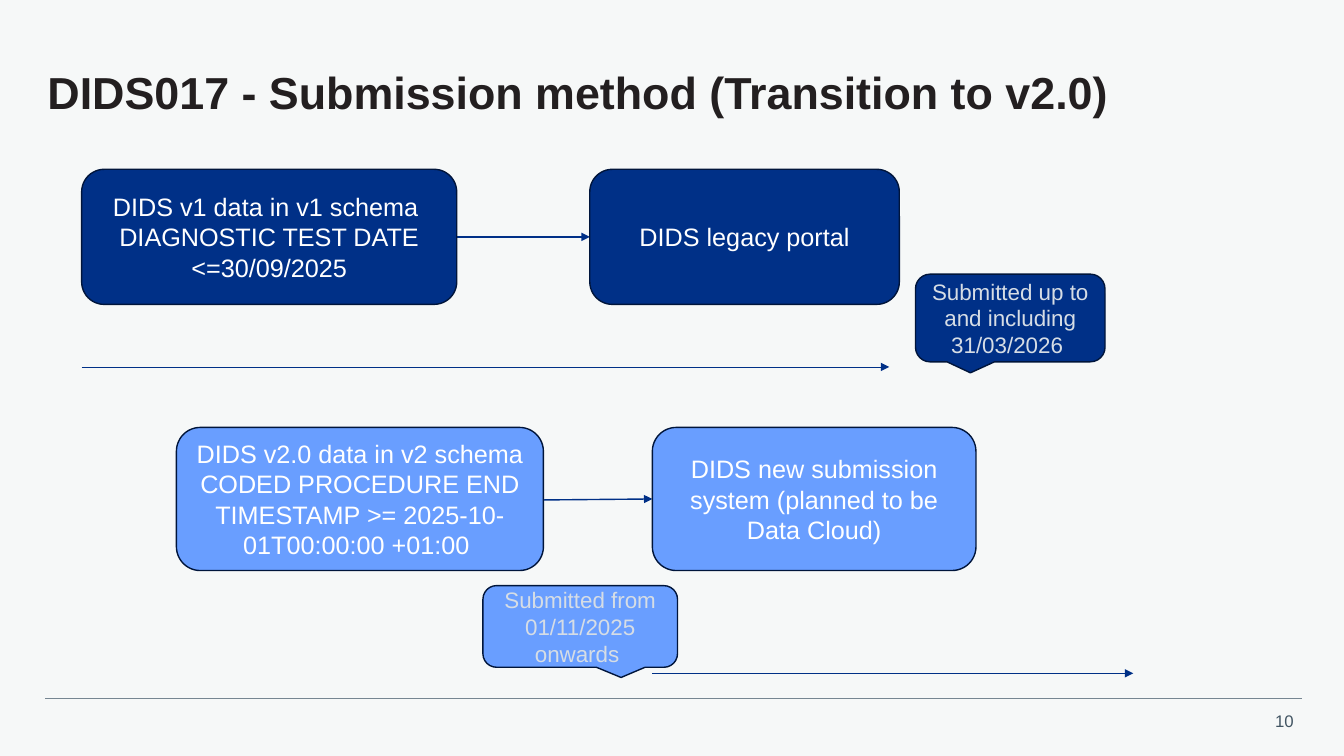
from lxml.etree import SubElement
from pptx import Presentation
from pptx.dml.color import RGBColor
from pptx.enum.shapes import MSO_CONNECTOR, MSO_SHAPE
from pptx.enum.text import MSO_ANCHOR, MSO_AUTO_SIZE, PP_ALIGN
from pptx.oxml.ns import qn
from pptx.util import Inches, Pt

NAVY = RGBColor(0x00, 0x30, 0x87)
SKY = RGBColor(0x69, 0x9E, 0xFF)
EDGE = RGBColor(0x00, 0x15, 0x3B)
WHITE = RGBColor(0xFF, 0xFF, 0xFF)
PALE = RGBColor(0xD6, 0xDD, 0xE5)
INK = RGBColor(0x23, 0x1F, 0x20)
SLATE = RGBColor(0x42, 0x55, 0x63)
RULE = RGBColor(0x76, 0x86, 0x92)
PAPER = RGBColor(0xF6, 0xF8, 0xF8)


def write(frame, text, size, color, align, bold=False):
    """Fill a text frame, one paragraph per line of text."""
    frame.word_wrap = True
    frame.auto_size = MSO_AUTO_SIZE.NONE
    frame.text = text
    for para in frame.paragraphs:
        para.alignment = align
        for run in para.runs:
            font = run.font
            font.name, font.size, font.bold = "Arial", Pt(size), bold
            font.color.rgb = color


def link(x1, y1, x2, y2, color, width, arrow=True):
    """Draw a straight line, with an arrowhead at its end if wanted."""
    line = slide.shapes.add_connector(
        MSO_CONNECTOR.STRAIGHT, Inches(x1), Inches(y1), Inches(x2), Inches(y2))
    line.line.color.rgb = color
    line.line.width = Pt(width)
    if arrow:
        SubElement(line.line._get_or_add_ln(), qn("a:tailEnd"), type="triangle")
    SubElement(line._element.spPr, qn("a:effectLst"))


prs = Presentation()
prs.slide_width, prs.slide_height = Inches(13.33), Inches(7.5)
slide = prs.slides.add_slide(prs.slide_layouts[5])
slide.background.fill.solid()
slide.background.fill.fore_color.rgb = PAPER

# Title
title = slide.shapes.title
title.left, title.top = Inches(0.47), Inches(0.47)
title.width, title.height = Inches(12.47), Inches(0.95)
frame = title.text_frame
write(frame, "DIDS017 - Submission method (Transition to v2.0)",
      32, INK, PP_ALIGN.LEFT, bold=True)
frame.vertical_anchor = MSO_ANCHOR.MIDDLE
frame.margin_left = frame.margin_right = 0
frame.margin_top = frame.margin_bottom = 0
frame.paragraphs[0].line_spacing = 0.9
frame.paragraphs[0].space_after = Pt(6)

# Footer
link(0.45, 6.93, 12.91, 6.93, RULE, 0.5, arrow=False)
number = slide.shapes.add_textbox(
    Inches(12.43), Inches(7), Inches(0.5), Inches(0.3))
write(number.text_frame, "10", 12, SLATE, PP_ALIGN.RIGHT)

# Time lines, then the arrows between boxes
link(0.81, 3.64, 8.82, 3.64, NAVY, 0.5)
link(6.47, 6.68, 11.24, 6.68, NAVY, 0.5)
link(4.53, 2.35, 5.85, 2.35, NAVY, 1)
link(5.39, 4.96, 6.47, 4.95, NAVY, 1)

# Boxes and callouts
BOX, NOTE = MSO_SHAPE.ROUNDED_RECTANGLE, MSO_SHAPE.ROUNDED_RECTANGULAR_CALLOUT
STYLES = {BOX: (18, WHITE), NOTE: (16, PALE)}
items = [
    (BOX, 0.81, 1.68, 3.72, 1.34, NAVY,
     "DIDS v1 data in v1 schema \nDIAGNOSTIC TEST DATE <=30/09/2025"),
    (BOX, 5.85, 1.68, 3.07, 1.34, NAVY, "DIDS legacy portal"),
    (BOX, 1.75, 4.24, 3.64, 1.42, SKY,
     "DIDS v2.0 data in v2 schema\n"
     "CODED PROCEDURE END TIMESTAMP >= 2025-10-01T00:00:00 +01:00 "),
    (BOX, 6.47, 4.24, 3.21, 1.42, SKY,
     "DIDS new submission system (planned to be Data Cloud)"),
    (NOTE, 9.08, 2.72, 1.88, 0.87, NAVY,
     "Submitted up to and including 31/03/2026 "),
    (NOTE, 4.79, 5.81, 1.93, 0.81, SKY,
     "Submitted from\n01/11/2025 onwards "),
]
for kind, x, y, w, h, fill, text in items:
    shape = slide.shapes.add_shape(
        kind, Inches(x), Inches(y), Inches(w), Inches(h))
    shape.shadow.inherit = False
    shape.fill.solid()
    shape.fill.fore_color.rgb = fill
    shape.line.color.rgb = EDGE
    shape.line.width = Pt(1)
    size, color = STYLES[kind]
    write(shape.text_frame, text, size, color, PP_ALIGN.CENTER)
    shape.text_frame.vertical_anchor = MSO_ANCHOR.MIDDLE
    if kind == NOTE:
        shape.adjustments[0] = -0.21 if fill == NAVY else 0.21

prs.save("out.pptx")
